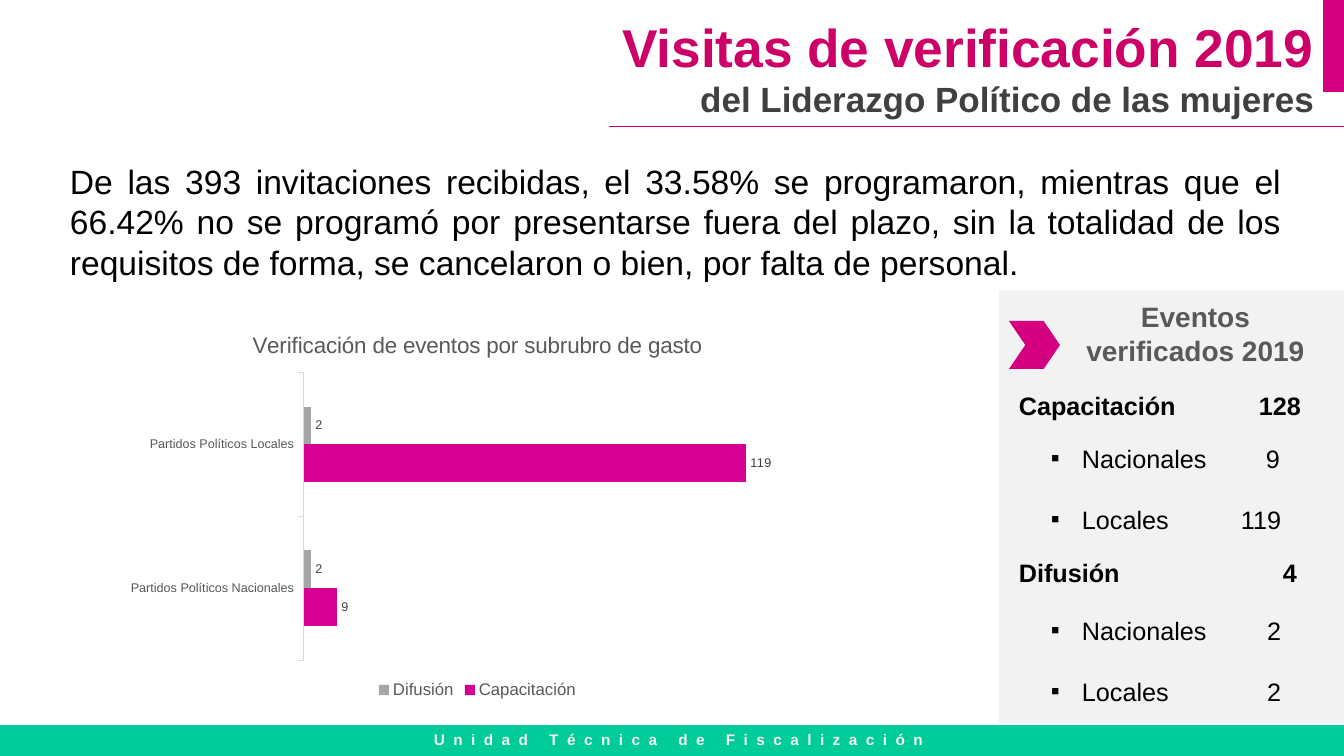
from typing import NamedTuple

from lxml import etree
from pptx import Presentation
from pptx import util as u
from pptx.chart.data import CategoryChartData
from pptx.dml.color import RGBColor
from pptx.enum import chart as charts, shapes, text
from pptx.oxml.ns import qn

EMU_PER_PX = 914400 / 100.8
FONT = "Arial"
PINK, GREEN, PANEL, GREY, BLACK = "D5007F", "00CC99", "F2F2F2", "595959", "000000"
BULLET_INDENT = 31
ALIGN = text.PP_ALIGN


class Box(NamedTuple):
    left: int
    top: int
    width: int
    height: int


class Style(NamedTuple):
    size: int
    color: str = BLACK
    bold: bool = False


class Count(NamedTuple):
    label: str
    value: int
    value_right: int


class EventGroup(NamedTuple):
    heading_box: Box
    heading: Count
    detail_box: Box
    details: list[Count]


class Series(NamedTuple):
    name: str
    values: tuple[int, ...]
    color: str


def px(value: float) -> int:
    return u.Emu(round(value * EMU_PER_PX))


def emu(box: Box) -> list[int]:
    return [px(value) for value in box]


def rgb(color: str) -> RGBColor:
    return RGBColor.from_string(color)


def style_font(font, style: Style) -> None:
    font.name, font.size, font.bold = FONT, u.Pt(style.size), style.bold
    font.color.rgb = rgb(style.color)


def add_run(paragraph, words: str, style: Style):
    run = paragraph.add_run()
    run.text = words
    style_font(run.font, style)
    return run


def add_block(slide, kind, box: Box, color: str):
    shape = slide.shapes.add_shape(kind, *emu(box))
    shape.shadow.inherit = False
    shape.fill.solid()
    shape.fill.fore_color.rgb = rgb(color)
    shape.line.fill.background()
    return shape


def add_frame(slide, box: Box):
    frame = slide.shapes.add_textbox(*emu(box)).text_frame
    frame.word_wrap = True
    return frame


def add_text(slide, box: Box, words: str, style: Style, align=ALIGN.LEFT):
    frame = add_frame(slide, box)
    frame.paragraphs[0].alignment = align
    return add_run(frame.paragraphs[0], words, style)


def add_count(paragraph, count: Count, text_left: int, style: Style, bullet: bool) -> None:
    properties = paragraph._p.get_or_add_pPr()
    if bullet:
        properties.set("marL", str(px(BULLET_INDENT)))
        properties.set("indent", str(-px(BULLET_INDENT)))
        etree.SubElement(properties, qn("a:buFont")).set("typeface", FONT)
        etree.SubElement(properties, qn("a:buChar")).set("char", "▪")
    tabs = etree.SubElement(properties, qn("a:tabLst"))
    tab = etree.SubElement(tabs, qn("a:tab"))
    tab.set("pos", str(px(count.value_right - text_left)))
    tab.set("algn", "r")
    add_run(paragraph, f"{count.label}\t{count.value}", style)


def add_counts(slide, box: Box, counts: list[Count], style: Style, bullet: bool) -> None:
    frame = add_frame(slide, box)
    for index, count in enumerate(counts):
        paragraph = frame.add_paragraph() if index else frame.paragraphs[0]
        if index:
            paragraph.space_before = u.Pt(22)
        add_count(paragraph, count, box.left + 10, style, bullet)


def add_bar_chart(slide, box: Box, title: str, categories: list[str], rows: list[Series]) -> None:
    data = CategoryChartData()
    data.categories = categories
    for row in rows:
        data.add_series(row.name, row.values)
    chart = slide.shapes.add_chart(charts.XL_CHART_TYPE.BAR_CLUSTERED, *emu(box), data).chart
    style_font(chart.font, Style(10))

    chart.has_title = True
    add_run(chart.chart_title.text_frame.paragraphs[0], title, Style(16, GREY))
    chart.has_legend = True
    chart.legend.position = charts.XL_LEGEND_POSITION.BOTTOM
    chart.legend.include_in_layout = False
    style_font(chart.legend.font, Style(12, GREY))

    # Axes
    category_axis, value_axis = chart.category_axis, chart.value_axis
    category_axis.major_tick_mark = charts.XL_TICK_MARK.OUTSIDE
    category_axis.format.line.color.rgb = rgb("D9D9D9")
    category_axis.format.line.width = u.Pt(0.75)
    style_font(category_axis.tick_labels.font, Style(9, GREY))
    value_axis.visible = False
    value_axis.has_major_gridlines = False
    value_axis.minimum_scale, value_axis.maximum_scale = 0, 140

    # Bars and their labels
    plot = chart.plots[0]
    plot.gap_width, plot.overlap, plot.vary_by_categories = 182, 0, False
    for series, row in zip(plot.series, rows):
        series.format.fill.solid()
        series.format.fill.fore_color.rgb = rgb(row.color)
        labels = series.data_labels
        labels.show_value = True
        labels.position = charts.XL_LABEL_POSITION.OUTSIDE_END
        style_font(labels.font, Style(9, "404040"))

    # Plot area placement, as shares of the chart
    area = chart._chartSpace.find(f".//{qn('c:plotArea')}")
    for old_layout in area.findall(qn("c:layout")):
        area.remove(old_layout)
    layout = etree.Element(qn("c:layout"))
    area.insert(0, layout)
    manual = etree.SubElement(layout, qn("c:manualLayout"))
    settings = {"layoutTarget": "inner", "xMode": "edge", "yMode": "edge",
                "x": 0.26, "y": 0.15, "w": 0.72, "h": 0.74}
    for name, value in settings.items():
        etree.SubElement(manual, qn(f"c:{name}")).set("val", str(value))


def main() -> None:
    presentation = Presentation()
    presentation.slide_width, presentation.slide_height = px(1344), px(756)
    slide = presentation.slides.add_slide(presentation.slide_layouts[5])

    # Footer band and corner mark
    add_block(slide, shapes.MSO_SHAPE.RECTANGLE, Box(0, 725, 1344, 31), GREEN)
    footer = add_text(slide, Box(13, 725, 1331, 29), "Unidad Técnica de Fiscalización",
                      Style(11, PANEL, True), ALIGN.CENTER)
    footer.font._element.set("spc", "600")
    add_block(slide, shapes.MSO_SHAPE.RECTANGLE, Box(1323, 0, 21, 92), PINK)

    # Title and rule
    title = slide.shapes.title
    title.left, title.top, title.width, title.height = emu(Box(577, 9, 747, 117))
    frame = title.text_frame
    frame.word_wrap, frame.auto_size = True, text.MSO_AUTO_SIZE.NONE
    frame.vertical_anchor = text.MSO_ANCHOR.TOP
    frame.paragraphs[0].alignment = ALIGN.RIGHT
    add_run(frame.paragraphs[0], "Visitas de verificación 2019 ", Style(38, "CC0066", True))
    add_run(frame.paragraphs[0], "del Liderazgo Político de las mujeres", Style(25, "404040", True))
    rule = slide.shapes.add_connector(shapes.MSO_CONNECTOR.STRAIGHT, px(609), px(126), px(1344), px(126))
    rule.line.color.rgb, rule.line.width = rgb("CC0066"), u.Pt(0.5)
    etree.SubElement(rule._element.spPr, qn("a:effectLst"))

    # Summary
    add_text(slide, Box(60, 156, 1231, 132),
             "De las 393 invitaciones recibidas, el 33.58% se programaron, mientras que el 66.42% "
             "no se programó por presentarse fuera del plazo, sin la totalidad de los requisitos "
             "de forma, se cancelaron o bien, por falta de personal.", Style(24), ALIGN.JUSTIFY)

    # Panel of verified events
    add_block(slide, shapes.MSO_SHAPE.RECTANGLE, Box(999, 290, 345, 433), PANEL)
    chevron = add_block(slide, shapes.MSO_SHAPE.CHEVRON, Box(1009, 321, 51, 48), PINK)
    chevron.adjustments[0] = 0.34
    add_text(slide, Box(1059, 295, 273, 78), "Eventos verificados 2019", Style(20, GREY, True), ALIGN.CENTER)
    groups = [
        EventGroup(Box(1009, 385, 313, 40), Count("Capacitación", 128, 1301), Box(1041, 438, 281, 102),
                   [Count("Nacionales", 9, 1280), Count("Locales", 119, 1293)]),
        EventGroup(Box(1009, 552, 313, 40), Count("Difusión", 4, 1297), Box(1041, 610, 281, 102),
                   [Count("Nacionales", 2, 1295), Count("Locales", 2, 1295)]),
    ]
    for group in groups:
        add_counts(slide, group.heading_box, [group.heading], Style(18, bold=True), False)
        add_counts(slide, group.detail_box, group.details, Style(18), True)

    # Chart
    add_bar_chart(slide, Box(116, 314, 723, 389), "Verificación de eventos por subrubro de gasto",
                  ["Partidos Políticos Nacionales", "Partidos Políticos Locales"],
                  [Series("Capacitación", (9, 119), "D60093"), Series("Difusión", (2, 2), "A6A6A6")])
    presentation.save("out.pptx")


if __name__ == "__main__":
    main()
